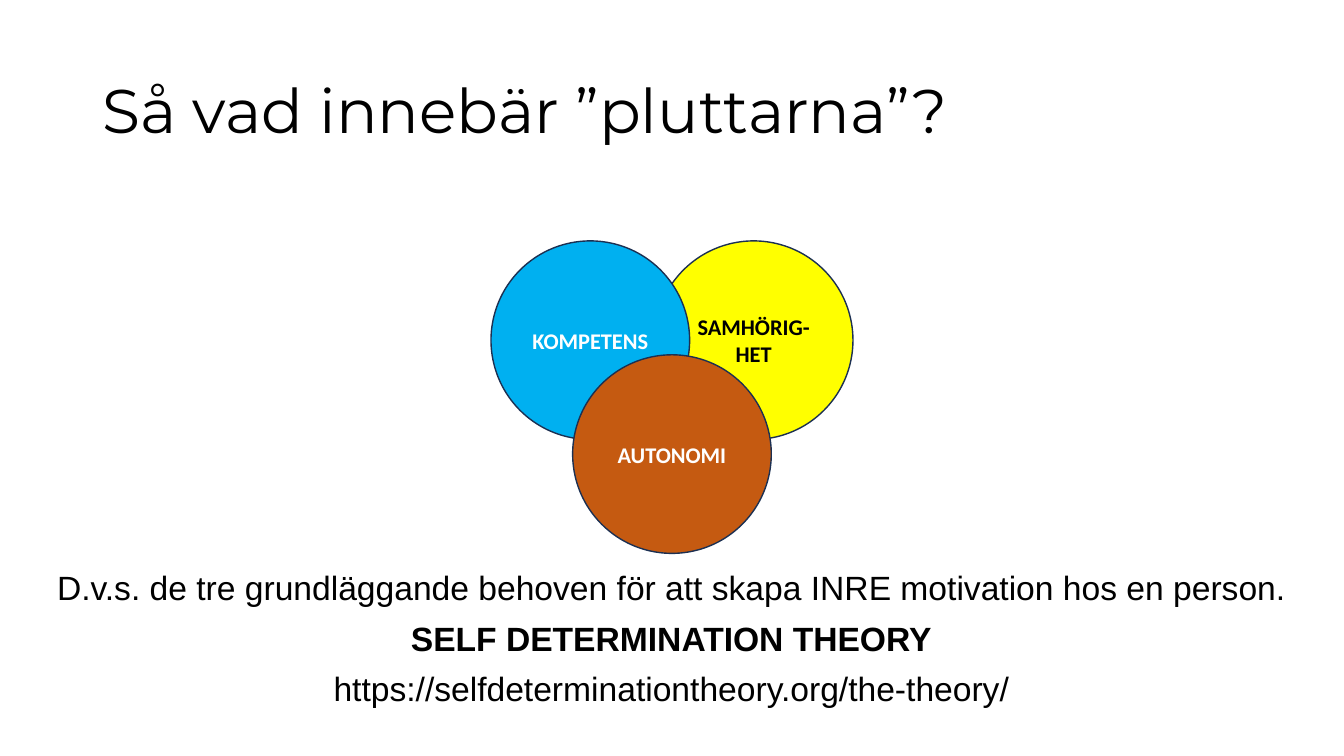
from dataclasses import dataclass

from pptx import Presentation
from pptx import util as u
from pptx.dml.color import RGBColor
from pptx.enum import shapes, text

WIDE, HIGH = 13.33, 7.5


@dataclass(frozen=True)
class Theme:
    black: str = "000000"
    white: str = "FFFFFF"
    blue: str = "00B0F0"
    gold: str = "FFFF00"
    rust: str = "C55A11"
    edge: str = "1C3052"
    title: int = 44
    body: int = 24
    label: int = 16


@dataclass(frozen=True)
class Grid:
    """Circle centres: columns from the middle, rows from the top."""
    left: float = WIDE / 2
    top: float = HIGH * 0.45
    col: float = 0.81
    row: float = 1.13
    size: float = 1.97


@dataclass(frozen=True)
class Need:
    label: str
    col: int
    row: int
    fill: str
    ink: str


@dataclass(frozen=True)
class Line:
    words: str
    face: str
    size: int
    bold: bool = False
    align: text.PP_ALIGN = text.PP_ALIGN.CENTER
    gap: int = 0
    ink: str = Theme.black
    lead: float = 0.9


THEME = Theme()
GRID = Grid()

HEAD = [Line("Så vad innebär ”pluttarna”?", "Montserrat", THEME.title,
             align=text.PP_ALIGN.LEFT)]
BODY = [
    Line("D.v.s. de tre grundläggande behoven för att skapa INRE motivation "
         "hos en person.", "Arial", THEME.body),
    Line("SELF DETERMINATION THEORY", "Arial", THEME.body, bold=True, gap=10),
    Line("https://selfdeterminationtheory.org/the-theory/", "Arial",
         THEME.body, gap=10),
]
# Back to front
NEEDS = [
    Need("SAMHÖRIG-HET", 1, 0, THEME.gold, THEME.black),
    Need("KOMPETENS", -1, 0, THEME.blue, THEME.white),
    Need("AUTONOMI", 0, 1, THEME.rust, THEME.white),
]


def assign(item, form: dict) -> None:
    for name, value in form.items():
        setattr(item, name, value)


def write(frame, lines: list[Line], anchor: text.MSO_ANCHOR) -> None:
    assign(frame, {"word_wrap": True, "vertical_anchor": anchor,
                   "auto_size": text.MSO_AUTO_SIZE.NONE})
    for i, line in enumerate(lines):
        para = frame.add_paragraph() if i else frame.paragraphs[0]
        assign(para, {"alignment": line.align, "line_spacing": line.lead,
                      "space_before": u.Pt(line.gap)})
        run = para.add_run()
        run.text = line.words
        assign(run.font, {"name": line.face, "size": u.Pt(line.size),
                          "bold": line.bold})
        run.font.color.rgb = RGBColor.from_string(line.ink)


def add_text(slide, share: tuple[float, float, float, float],
             lines: list[Line], anchor: text.MSO_ANCHOR) -> None:
    sides = (WIDE, HIGH, WIDE, HIGH)
    box = slide.shapes.add_textbox(
        *(u.Inches(part * side) for part, side in zip(share, sides)))
    write(box.text_frame, lines, anchor)


def add_need(slide, need: Need) -> None:
    left = GRID.left + need.col * GRID.col - GRID.size / 2
    top = GRID.top + need.row * GRID.row - GRID.size / 2
    disc = slide.shapes.add_shape(
        shapes.MSO_SHAPE.OVAL,
        *(u.Inches(n) for n in (left, top, GRID.size, GRID.size)))
    disc.shadow.inherit = False
    disc.fill.solid()
    disc.fill.fore_color.rgb = RGBColor.from_string(need.fill)
    disc.line.color.rgb = RGBColor.from_string(THEME.edge)
    disc.line.width = u.Pt(1)
    label = Line(need.label, "Calibri", THEME.label, bold=True,
                 ink=need.ink, lead=1.0)
    write(disc.text_frame, [label], text.MSO_ANCHOR.MIDDLE)


def main() -> None:
    deck = Presentation()
    assign(deck, {"slide_width": u.Inches(WIDE),
                  "slide_height": u.Inches(HIGH)})
    slide = deck.slides.add_slide(deck.slide_layouts[6])

    # Title and explanation
    add_text(slide, (0.069, 0.053, 0.863, 0.193), HEAD, text.MSO_ANCHOR.MIDDLE)
    add_text(slide, (0.008, 0.75, 0.983, 0.15), BODY, text.MSO_ANCHOR.TOP)

    # Three overlapping needs
    for need in NEEDS:
        add_need(slide, need)

    deck.save("out.pptx")


if __name__ == "__main__":
    main()
